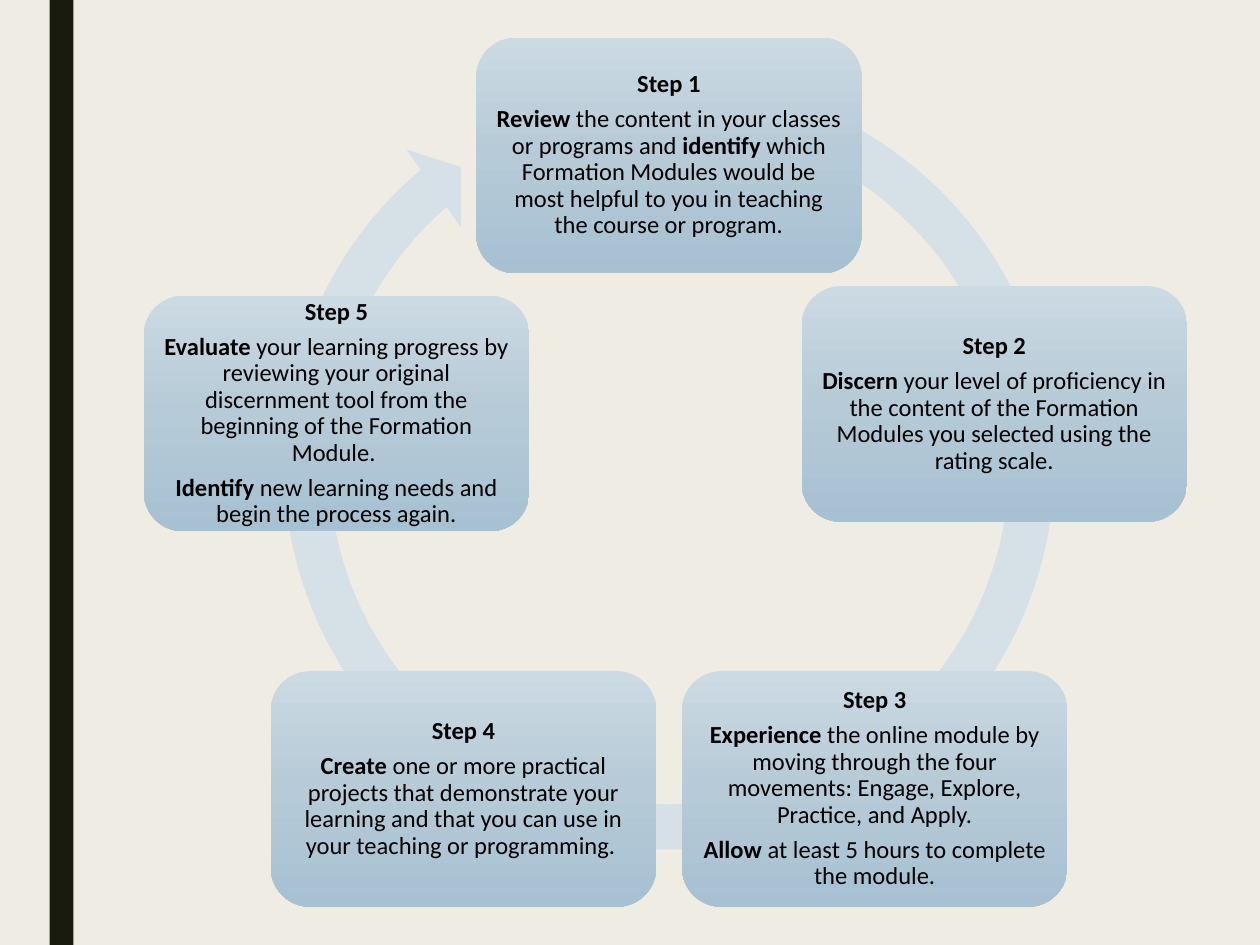
from copy import deepcopy
from dataclasses import dataclass

from pptx import Presentation
from pptx.dml.color import RGBColor
from pptx.enum.shapes import MSO_SHAPE
from pptx.enum.text import MSO_ANCHOR, PP_ALIGN
from pptx.oxml.ns import qn
from pptx.util import Cm, Pt

RECT = MSO_SHAPE.RECTANGLE
ROUND_RECT = MSO_SHAPE.ROUNDED_RECTANGLE
CIRCULAR_ARROW = MSO_SHAPE.CIRCULAR_ARROW
MIDDLE = MSO_ANCHOR.MIDDLE
CENTER = PP_ALIGN.CENTER


@dataclass(frozen=True)
class Theme:
    background: str = "EFEDE3"
    bar: str = "191B0E"
    ring: str = "D6E0E7"
    text: str = "000000"
    card: tuple[str, str, str] = ("CCDAE3", "B6CAD7", "A7C1D2")
    font: str = "Calibri"
    size: float = 14
    line_spacing: float = 0.9
    space_after: float = 4.9


@dataclass(frozen=True)
class Run:
    text: str
    bold: bool = False


@dataclass(frozen=True)
class Step:
    left: float
    top: float
    paragraphs: list[list[Run]]


THEME = Theme()
CARD_W, CARD_H, CARD_MARGIN = 7.77, 4.75, 0.16
RING_ADJUSTMENTS = (0.055, 3.307, 137.705, 173.892, 0.058)

STEPS = [
    Step(9.6, 0.76, [[
        Run("Review", True),
        Run(" the content in your classes or programs and "),
        Run("identify ", True),
        Run("which Formation Modules would be most helpful to you "
            "in teaching the course or program."),
    ]]),
    Step(16.16, 5.77, [[
        Run("Discern", True),
        Run(" your level of proficiency in the content of the Formation "
            "Modules you selected using the rating scale."),
    ]]),
    Step(13.75, 13.53, [[
        Run("Experience", True),
        Run(" the online module by moving through the four movements: "
            "Engage, Explore, Practice, and Apply."),
    ], [
        Run("Allow", True),
        Run(" at least 5 hours to complete the module."),
    ]]),
    Step(5.46, 13.53, [[
        Run("Create", True),
        Run(" one or more practical projects that demonstrate your learning "
            "and that you can use in your teaching or programming. "),
    ]]),
    Step(2.9, 5.96, [[
        Run("Evaluate", True),
        Run(" your learning progress by reviewing your original discernment "
            "tool from the beginning of the Formation Module. "),
    ], [
        Run("Identify", True),
        Run(" new learning needs and begin the process again."),
    ]]),
]


def rgb(value: str) -> RGBColor:
    return RGBColor.from_string(value)


def add_shape(slide, kind, left: float, top: float, width: float, height: float):
    s = slide.shapes.add_shape(kind, Cm(left), Cm(top), Cm(width), Cm(height))
    s.shadow.inherit = False
    s.line.fill.background()
    return s


def fill_solid(fill, color: str) -> None:
    fill.solid()
    fill.fore_color.rgb = rgb(color)


def fill_gradient(s, colors: tuple[str, str, str]) -> None:
    s.fill.gradient()
    s.fill.gradient_angle = 270
    stops = s._element.spPr.find(qn("a:gradFill")).find(qn("a:gsLst"))
    stops.insert(1, deepcopy(stops[0]))
    for i, (stop, color) in enumerate(zip(s.fill.gradient_stops, colors)):
        stop.position = i / (len(colors) - 1)
        stop.color.rgb = rgb(color)


def add_paragraph(p, runs: list[Run]) -> None:
    p.alignment = CENTER
    p.line_spacing = THEME.line_spacing
    p.space_after = Pt(THEME.space_after)
    for run in runs:
        r = p.add_run()
        r.text = run.text
        r.font.name = THEME.font
        r.font.size = Pt(THEME.size)
        r.font.bold = run.bold
        r.font.color.rgb = rgb(THEME.text)


def add_card(slide, number: int, step: Step) -> None:
    s = add_shape(slide, ROUND_RECT, step.left, step.top, CARD_W, CARD_H)
    fill_gradient(s, THEME.card)
    tf = s.text_frame
    tf.word_wrap = True
    tf.vertical_anchor = MIDDLE
    tf.margin_left = tf.margin_right = Cm(CARD_MARGIN)
    tf.margin_top = tf.margin_bottom = Cm(CARD_MARGIN)
    add_paragraph(tf.paragraphs[0], [Run(f"Step {number}", True)])
    for runs in step.paragraphs:
        add_paragraph(tf.add_paragraph(), runs)


def main() -> None:
    prs = Presentation()
    prs.slide_width, prs.slide_height = Cm(25.4), Cm(19.05)
    slide = prs.slides.add_slide(prs.slide_layouts[6])
    fill_solid(slide.background.fill, THEME.background)

    bar = add_shape(slide, RECT, 1, 0, 0.48, 19.05)
    fill_solid(bar.fill, THEME.bar)

    ring = add_shape(slide, CIRCULAR_ARROW, 5.22, 1.09, 16.54, 16.54)
    fill_solid(ring.fill, THEME.ring)
    for i, value in enumerate(RING_ADJUSTMENTS):
        ring.adjustments[i] = value

    for number, step in enumerate(STEPS, start=1):
        add_card(slide, number, step)
    prs.save("out.pptx")


if __name__ == "__main__":
    main()
